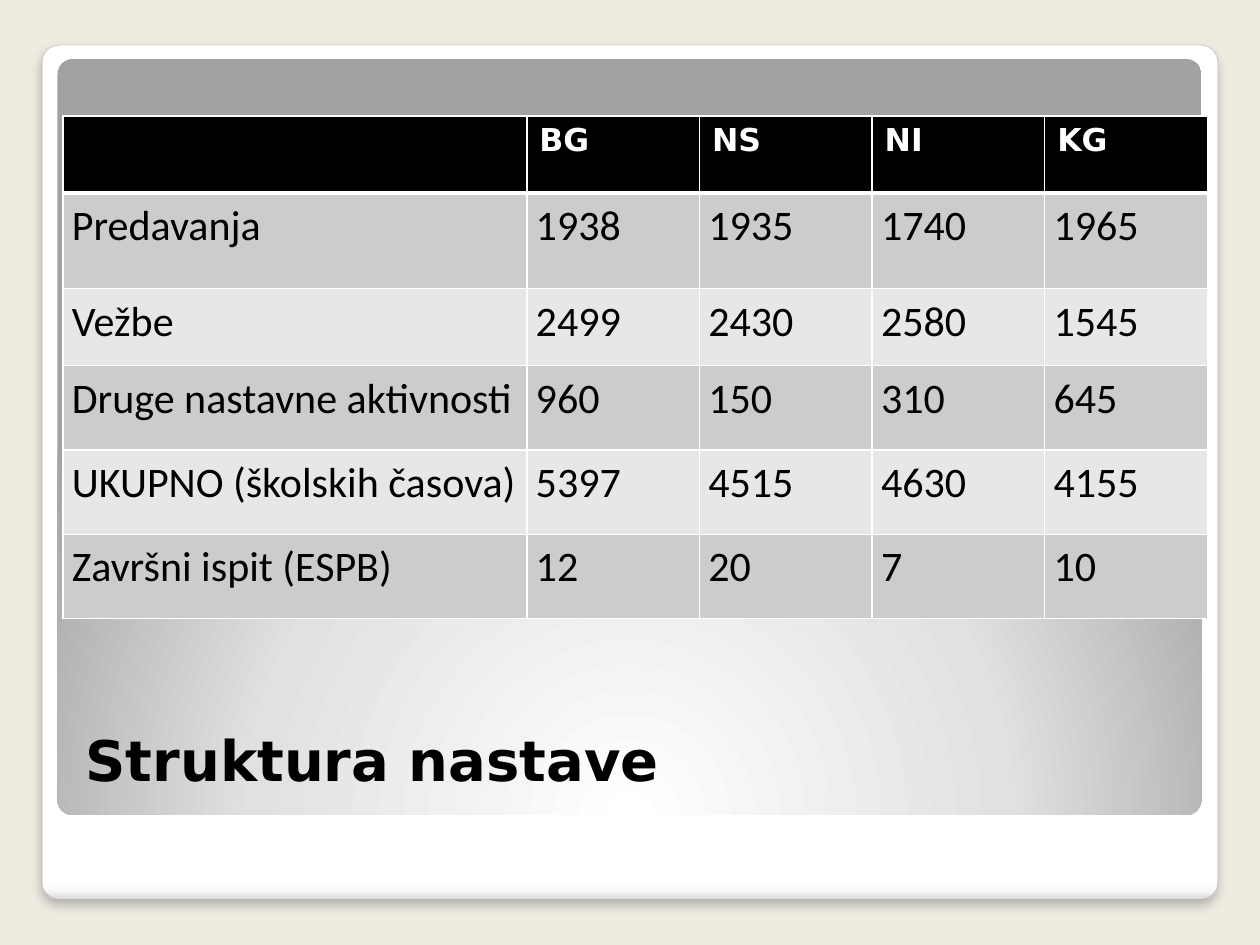
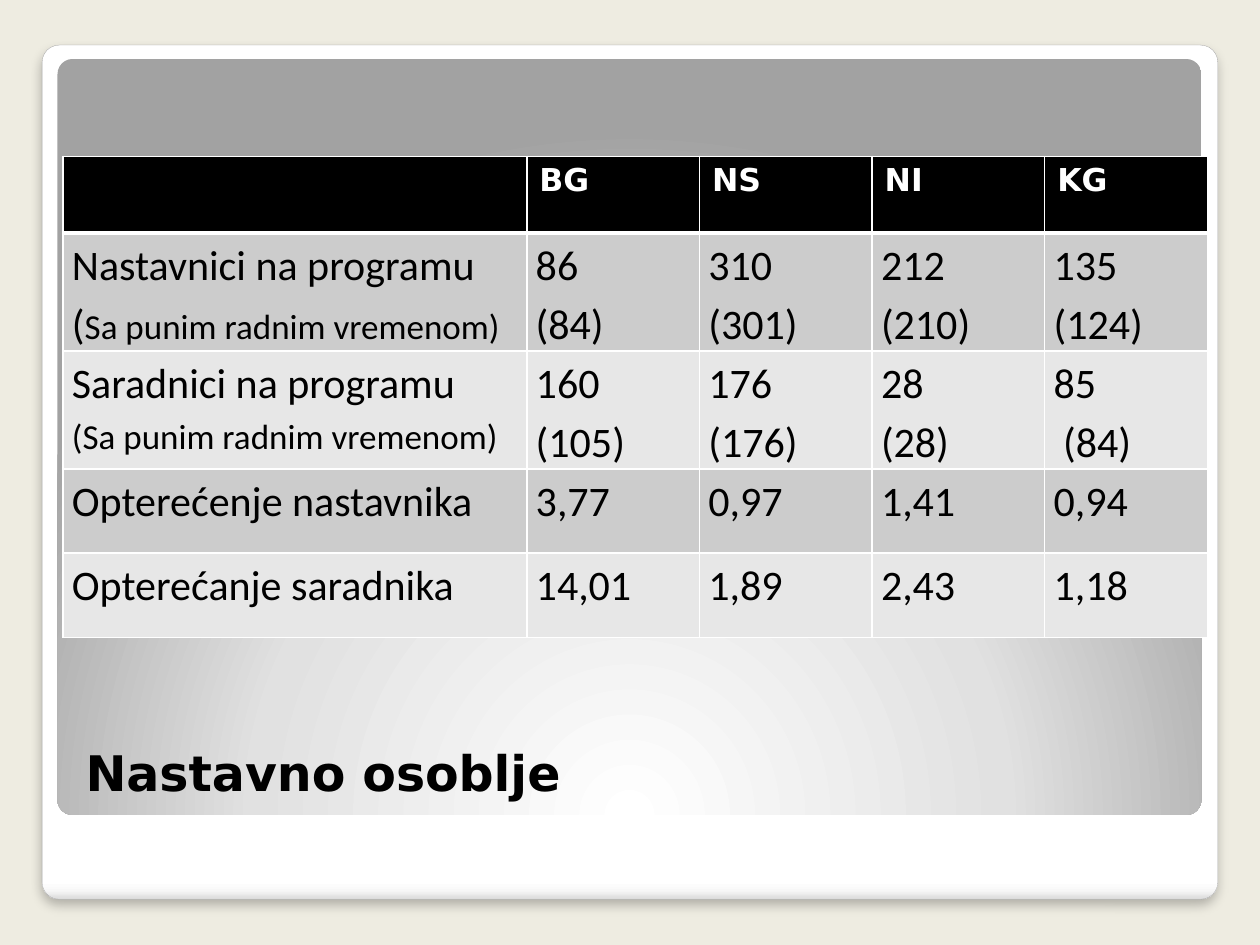
from lxml.etree import SubElement
from pptx import Presentation
from pptx.dml.color import RGBColor
from pptx.enum.shapes import MSO_SHAPE as Shape
from pptx.enum.text import MSO_ANCHOR as Anchor, MSO_AUTO_SIZE as AutoSize, PP_ALIGN as Align
from pptx.oxml.ns import qn
from pptx.util import Cm, Pt

CREAM, WHITE, BLACK, EDGE = "EEECE1", "FFFFFF", "000000", "A4A4A4"
BANDS = ("CCCCCC", "E7E7E7")
HEAD_FONT, BODY_FONT = "DejaVu Sans", "Calibri"
COLUMN_WIDTHS = (9.35, 3.48, 3.48, 3.48, 3.28)
TABLE_LEFT = 1.27
CITIES = ("", "BG", "NS", "NI", "KG")
TEACHING = (
    CITIES,
    ("Predavanja", "1938", "1935", "1740", "1965"),
    ("Vežbe", "2499", "2430", "2580", "1545"),
    ("Druge nastavne aktivnosti", "960", "150", "310", "645"),
    ("UKUPNO (školskih časova)", "5397", "4515", "4630", "4155"),
    ("Završni ispit (ESPB)", "12", "20", "7", "10"),
)
STAFF = (
    CITIES,
    ("Nastavnici na programu\n(Sa punim radnim vremenom)",
     "86\n(84)", "310 (301)", "212 (210)", "135 (124)"),
    ("Saradnici na programu\n(Sa punim radnim vremenom)",
     "160\n(105)", "176 (176)", "28\n(28)", "85\n (84)"),
    ("Opterećenje nastavnika", "3,77", "0,97", "1,41", "0,94"),
    ("Opterećanje saradnika", "14,01", "1,89", "2,43", "1,18"),
)


def color(code):
    """Turn a hex string into a colour."""
    return RGBColor.from_string(code)


def add_node(parent, tag, **attributes):
    """Append a DrawingML element and return it."""
    return SubElement(parent, qn(tag), {key: str(value) for key, value in attributes.items()})


def style_runs(para, font, size, ink, bold=False):
    """Format every run of a paragraph."""
    for span in para.runs:
        span.font.name, span.font.size, span.font.bold = font, Pt(size), bold
        span.font.color.rgb = color(ink)


def add_panel(page, left, top, width, height, stops):
    """Add a rounded panel and return it with its gradient element."""
    panel = page.shapes.add_shape(
        Shape.ROUNDED_RECTANGLE, Cm(left), Cm(top), Cm(width), Cm(height))
    panel.adjustments[0] = 0.02
    gradient = add_node(panel._element.spPr, "a:gradFill", rotWithShape=1)
    stop_list = add_node(gradient, "a:gsLst")
    for position, code in stops:
        stop = add_node(stop_list, "a:gs", pos=position * 1000)
        add_node(stop, "a:srgbClr", val=code)
    panel.line.fill.background()
    panel.shadow.inherit = False
    return panel, gradient


def add_shadow(panel):
    """Give a panel a soft shadow below it."""
    effects = panel._element.spPr.find(qn("a:effectLst"))
    shadow = add_node(effects, "a:outerShdw", blurRad=Pt(6), dist=Pt(4),
                      dir=90 * 60000, algn="t", rotWithShape=0)
    add_node(add_node(shadow, "a:srgbClr", val=BLACK), "a:alpha", val=25000)


def decorate_layout(layout, page):
    """Draw the shared background and panels and move them to the layout."""
    layout.background.fill.solid()
    layout.background.fill.fore_color.rgb = color(CREAM)
    frame, gradient = add_panel(page, 0.85, 0.91, 23.7, 17.22, (
        (0, WHITE), (98, WHITE), (99, "F7F7F7"), (100, "DADADA")))
    add_node(gradient, "a:lin", ang=90 * 60000, scaled=0)
    frame.line.color.rgb = color(EDGE)
    frame.line.width = Pt(0.16)
    add_shadow(frame)
    glow, gradient = add_panel(page, 1.16, 1.19, 23.06, 15.24, (
        (0, WHITE), (55, "E1E1E1"), (100, "A2A2A2")))
    circle = add_node(gradient, "a:path", path="circle")
    add_node(circle, "a:fillToRect", l=50000, t=175000, r=50000, b=-75000)
    for index, panel in enumerate((frame, glow)):
        layout.shapes._spTree.insert(2 + index, panel._element)


def set_title(page, text, size):
    """Place the title one line above the bottom of its box."""
    title = page.shapes.title
    title.left, title.top, title.width, title.height = Cm(1.47), Cm(15.04), Cm(22.53), Cm(2.34)
    box = title.text_frame
    box.text = text
    box.word_wrap = True
    box.auto_size = AutoSize.NONE
    box.vertical_anchor = Anchor.BOTTOM
    box.margin_bottom = Cm(size * 0.044)
    box.paragraphs[0].alignment = Align.LEFT
    style_runs(box.paragraphs[0], HEAD_FONT, size, BLACK, bold=True)


def set_borders(cell, top, bottom):
    """Draw white borders around a cell, thin at the sides."""
    properties = cell._tc.get_or_add_tcPr()
    for side, width in (("L", 1), ("R", 1), ("T", top), ("B", bottom)):
        line = add_node(properties, f"a:ln{side}", w=Pt(width))
        add_node(add_node(line, "a:solidFill"), "a:srgbClr", val=WHITE)


def fill_cell(cell, text, row):
    """Write and format one cell as header or banded body."""
    is_header = row == 0
    set_borders(cell, top=3 if row == 1 else 1, bottom=3 if is_header else 1)
    cell.fill.solid()
    cell.fill.fore_color.rgb = color(BLACK if is_header else BANDS[(row - 1) % 2])
    cell.text_frame.text = text
    if not is_header:
        cell.margin_left = cell.margin_right = Cm(0.18)
        cell.margin_top = cell.margin_bottom = 0
    for para in cell.text_frame.paragraphs:
        if is_header:
            style_runs(para, HEAD_FONT, 18, WHITE, bold=True)
        else:
            para.line_spacing = 1.15
            style_runs(para, BODY_FONT, 24, BLACK)


def add_city_table(page, top, rows, row_heights):
    """Add a table with one column per city."""
    table = page.shapes.add_table(
        len(rows), len(CITIES), Cm(TABLE_LEFT), Cm(top),
        Cm(sum(COLUMN_WIDTHS)), Cm(sum(row_heights))).table
    for column, width in zip(table.columns, COLUMN_WIDTHS):
        column.width = Cm(width)
    for row, (texts, height) in enumerate(zip(rows, row_heights)):
        table.rows[row].height = Cm(height)
        for column, text in enumerate(texts):
            fill_cell(table.cell(row, column), text, row)
    return table


def shrink_note(cell, start):
    """Make the second line of a cell smaller from a given character on."""
    para = cell.text_frame.paragraphs[1]
    lead, note = para.text[:start], para.text[start:]
    para.text = lead
    style_runs(para, BODY_FONT, 24, BLACK)
    para.add_run().text = note
    style_runs(para, BODY_FONT, 20, BLACK)
    if lead:
        para.runs[0].font.size = Pt(24)


def main():
    """Build the two slides and save the deck."""
    deck = Presentation()
    deck.slide_width, deck.slide_height = Cm(25.4), Cm(19.05)
    layout = deck.slide_layouts[5]

    page = deck.slides.add_slide(layout)
    decorate_layout(layout, page)
    set_title(page, "Struktura nastave", 32)
    add_city_table(page, 2.34, TEACHING, (1.55, 1.93, 1.55, 1.7, 1.7, 1.7))

    page = deck.slides.add_slide(layout)
    set_title(page, "Nastavno osoblje", 28)
    table = add_city_table(page, 3.15, STAFF, (1.55, 1.93, 1.55, 1.7, 1.7))
    shrink_note(table.cell(1, 0), 1)
    shrink_note(table.cell(2, 0), 0)

    deck.save("out.pptx")


if __name__ == "__main__":
    main()
